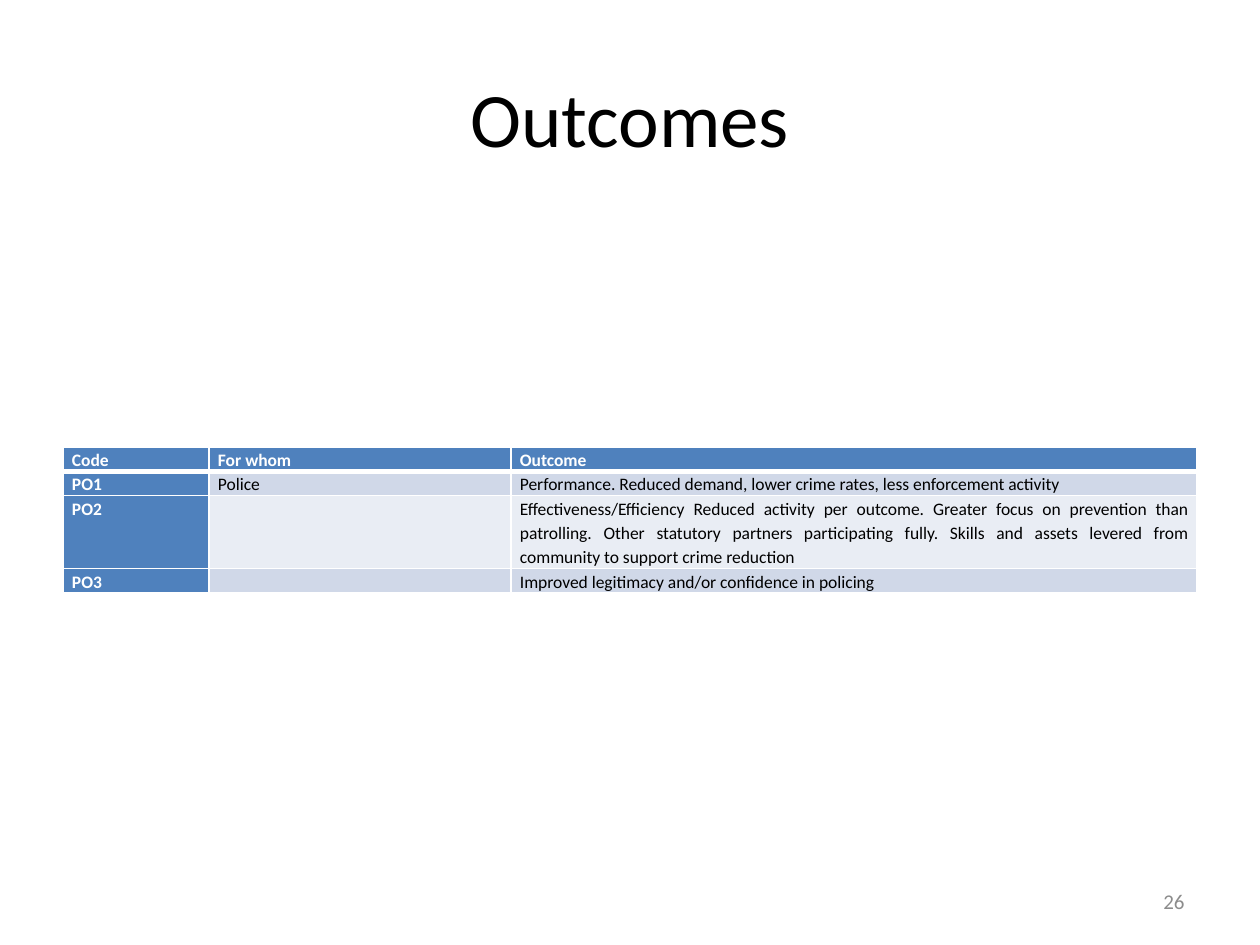
from lxml.etree import SubElement
from pptx import Presentation
from pptx.dml.color import RGBColor
from pptx.enum.text import MSO_ANCHOR as Anchor, PP_ALIGN as Align
from pptx.oxml.ns import qn
from pptx.util import Pt

TITLE = "Outcomes"
PAGE_NUMBER = "26"
ROWS = [
    ("Code", "For whom", "Outcome"),
    ("PO1", "Police", "Performance. Reduced demand, lower crime rates, less enforcement activity"),
    ("PO2", "", "Effectiveness/Efficiency Reduced activity per outcome. Greater focus on "
     "prevention than patrolling. Other statutory partners participating fully. "
     "Skills and assets levered from community to support crime reduction"),
    ("PO3", "", "Improved legitimacy and/or confidence in policing"),
]
COLUMN_WIDTHS = [146, 302, 686]
ROW_HEIGHTS = [24, 24, 73, 24]
TABLE_LEFT, TABLE_TOP = 63, 447
HEADER_FILL = "4F81BD"
BAND_FILLS = ["E9EDF4", "D0D8E8"]
WHITE, BLACK, GREY = "FFFFFF", "000000", "8C8C8C"
FONT = "Calibri"


def px(length):
    """Turn pixels into EMU."""
    return round(length * 914400 / 126)


def color(value):
    """Turn a hex string into a colour."""
    return RGBColor.from_string(value)


def style(para, size, ink, align, bold=False):
    """Format a paragraph and its runs."""
    para.alignment = align
    for span in para.runs:
        span.font.name = FONT
        span.font.size = Pt(size)
        span.font.bold = bold
        span.font.color.rgb = color(ink)


def add_text(page, text, bounds, size, ink, align):
    """Add a vertically centred text box."""
    box = page.shapes.add_textbox(*map(px, bounds))
    frame = box.text_frame
    frame.word_wrap = True
    frame.vertical_anchor = Anchor.MIDDLE
    frame.text = text
    style(frame.paragraphs[0], size, ink, align)


def add_border(cell, side, width):
    """Draw one white edge of a cell."""
    line = SubElement(cell._tc.get_or_add_tcPr(), qn(f"a:ln{side}"), w=str(Pt(width)))
    fill = SubElement(line, qn("a:solidFill"))
    SubElement(fill, qn("a:srgbClr"), val=WHITE)


def fill_cell(cell, text, row, column):
    """Write and format one table cell."""
    strong = row == 0 or column == 0
    cell.margin_left = cell.margin_right = px(9)
    cell.margin_top = cell.margin_bottom = 0
    widths = {"L": 1, "R": 1, "T": 3 if row == 1 else 1, "B": 3 if row == 0 else 1}
    for side, width in widths.items():
        add_border(cell, side, width)
    cell.fill.solid()
    cell.fill.fore_color.rgb = color(HEADER_FILL if strong else BAND_FILLS[row % 2])
    para = cell.text_frame.paragraphs[0]
    if text:
        para.text = text
        para.line_spacing = 1.15
        para.space_before = para.space_after = Pt(10)
        style(para, 10, WHITE if strong else BLACK, Align.JUSTIFY, strong)
    else:
        SubElement(para._p, qn("a:endParaRPr"), sz="1000")


def add_outcomes(page):
    """Add the table of outcomes."""
    frame = page.shapes.add_table(
        len(ROWS), len(COLUMN_WIDTHS), px(TABLE_LEFT), px(TABLE_TOP),
        px(sum(COLUMN_WIDTHS)), px(sum(ROW_HEIGHTS)))
    table = frame.table
    table.first_row = table.horz_banding = False
    for column, width in zip(table.columns, COLUMN_WIDTHS):
        column.width = px(width)
    for row, height in zip(table.rows, ROW_HEIGHTS):
        row.height = px(height)
    for row, texts in enumerate(ROWS):
        for column, text in enumerate(texts):
            fill_cell(table.cell(row, column), text, row, column)


def main():
    """Build the outcomes slide."""
    deck = Presentation()
    deck.slide_width, deck.slide_height = px(1260), px(945)
    page = deck.slides.add_slide(deck.slide_layouts[6])
    add_text(page, TITLE, (63, 38, 1134, 158), 44, BLACK, Align.CENTER)
    add_text(page, PAGE_NUMBER, (903, 876, 294, 50), 12, GREY, Align.RIGHT)
    add_outcomes(page)
    deck.save("out.pptx")


if __name__ == "__main__":
    main()
